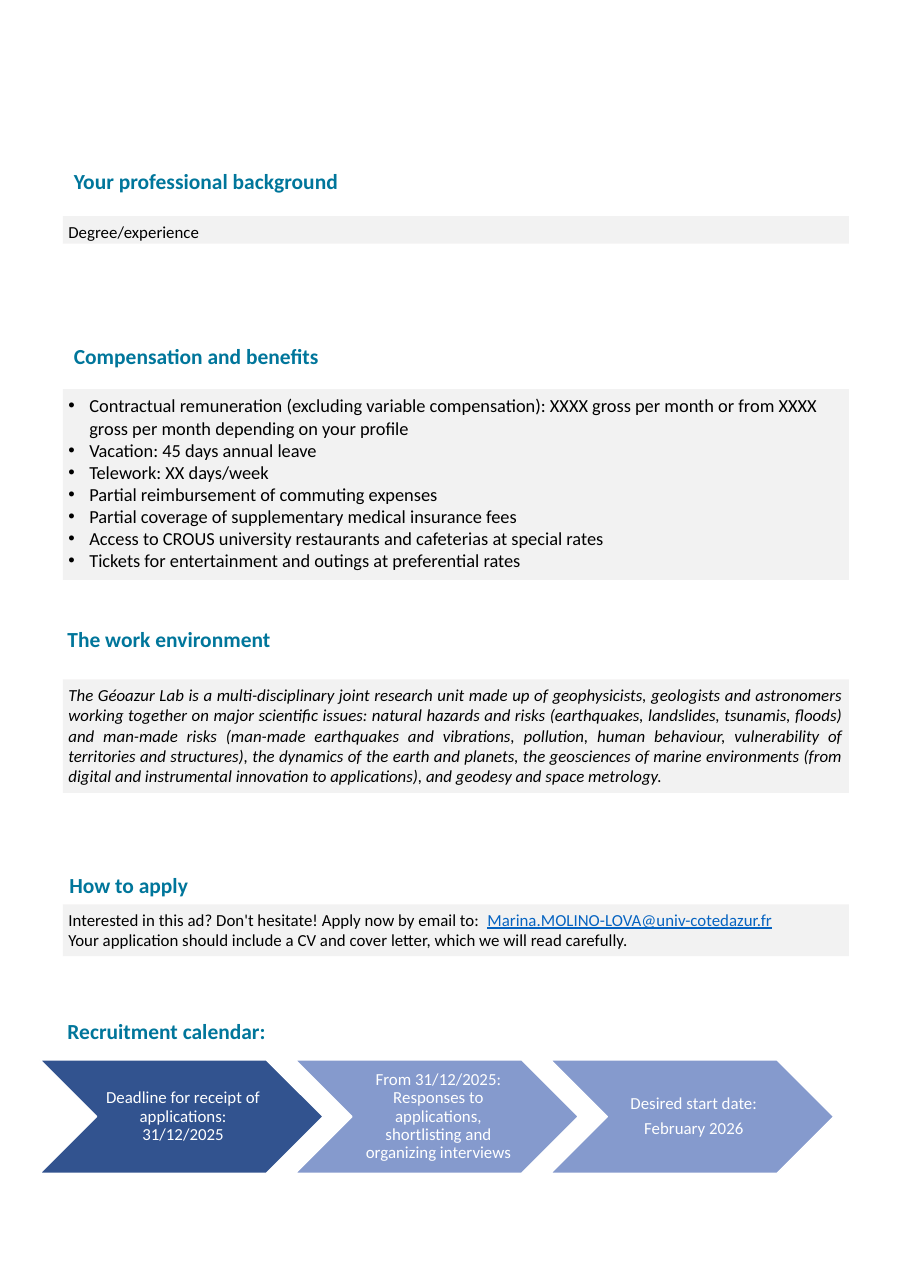
"""Build the job advert page: background, benefits, environment, application and calendar."""
from lxml.etree import SubElement
from pptx import Presentation
from pptx.dml.color import RGBColor
from pptx.enum.shapes import MSO_SHAPE
from pptx.enum.text import MSO_ANCHOR, PP_ALIGN
from pptx.oxml.ns import qn
from pptx.util import Inches, Pt

TEAL = RGBColor(0x00, 0x76, 0x9B)
PANEL_GREY = RGBColor(0xE7, 0xE6, 0xE6)
NAVY = RGBColor(0x32, 0x53, 0x8F)
PERIWINKLE = RGBColor(0x85, 0x9A, 0xCD)
LINK_BLUE = RGBColor(0x05, 0x63, 0xC1)
BLACK = RGBColor(0, 0, 0)
WHITE = RGBColor(0xFF, 0xFF, 0xFF)

advert = Presentation()
advert.slide_width, advert.slide_height = Inches(8.26), Inches(11.68)
page = advert.slides.add_slide(advert.slide_layouts[6])


def area(left, top, width, height):
    """Turn percentages of the page into lengths."""
    across, down = advert.slide_width / 100, advert.slide_height / 100
    return int(left * across), int(top * down), int(width * across), int(height * down)


def write(frame, text, size=11, color=BLACK, bold=False, italic=False, underline=False,
          align=PP_ALIGN.LEFT, bullet=False, spacing=None, before=None, inset=0.05,
          anchor=MSO_ANCHOR.TOP, continued=False):
    """Add a paragraph, or continue the last one, in the given format."""
    frame.word_wrap = True
    frame.vertical_anchor = anchor
    frame.margin_left = frame.margin_right = frame.margin_top = frame.margin_bottom = Inches(inset)
    paragraph = frame.paragraphs[-1]
    if paragraph.runs and not continued:
        paragraph = frame.add_paragraph()
        if before:
            paragraph.space_before = Pt(before)
    paragraph.alignment = align
    if spacing:
        paragraph.line_spacing = spacing
    if bullet:
        properties = paragraph._p.get_or_add_pPr()
        properties.set("marL", str(Inches(0.19)))
        properties.set("indent", str(-Inches(0.19)))
        SubElement(properties, qn("a:buFont")).set("typeface", "Arial")
        SubElement(properties, qn("a:buChar")).set("char", "•")
    run = paragraph.add_run()
    run.text = text
    run.font.name, run.font.size = "Calibri", Pt(size)
    run.font.bold, run.font.italic, run.font.underline = bold, italic, underline
    run.font.color.rgb = color


headings = [
    ("Your professional background", 7.5, 12.6),
    ("Compensation and benefits", 7.5, 26.2),
    ("The work environment", 6.8, 48.2),
    ("How to apply", 7, 67.3),
    ("Recruitment calendar:", 6.8, 78.6),
]
for heading, left, top in headings:
    title = page.shapes.add_textbox(*area(left, top, 85.1, 2.65))
    write(title.text_frame, heading, size=14, color=TEAL, bold=True)

benefits = [
    "Contractual remuneration (excluding variable compensation): XXXX gross per month "
    "or from XXXX gross per month depending on your profile",
    "Vacation: 45 days annual leave",
    "Telework: XX days/week",
    "Partial reimbursement of commuting expenses",
    "Partial coverage of supplementary medical insurance fees",
    "Access to CROUS university restaurants and cafeterias at special rates",
    "Tickets for entertainment and outings at preferential rates",
]
environment = (
    "The Géoazur Lab is a multi-disciplinary joint research unit made up of geophysicists, "
    "geologists and astronomers working together on major scientific issues: natural hazards "
    "and risks (earthquakes, landslides, tsunamis, floods) and man-made risks (man-made "
    "earthquakes and vibrations, pollution, human behaviour, vulnerability of territories and "
    "structures), the dynamics of the earth and planets, the geosciences of marine environments "
    "(from digital and instrumental innovation to applications), and geodesy and space metrology."
)
justified = {"align": PP_ALIGN.JUSTIFY}
panels = [
    (16.78, 2.14, [("Degree/experience", justified)]),
    (30.22, 14.81, [(benefit, {"size": 12, "bullet": True}) for benefit in benefits]),
    (52.74, 8.82, [(environment, {"italic": True, **justified})]),
    (70.21, 4.02, [
        ("Interested in this ad? Don't hesitate! Apply now by email to:  ", justified),
        ("Marina.MOLINO-LOVA@univ-cotedazur.fr",
         {"color": LINK_BLUE, "underline": True, "continued": True, **justified}),
        ("Your application should include a CV and cover letter, which we will read carefully.",
         justified),
    ]),
]
for top, height, passages in panels:
    panel = page.shapes.add_shape(MSO_SHAPE.RECTANGLE, *area(6.9, top, 86.3, height))
    panel.shadow.inherit = False
    panel.line.fill.background()
    panel.fill.solid()
    panel.fill.fore_color.rgb = PANEL_GREY
    tint = panel._element.spPr.find(qn("a:solidFill"))[0]
    SubElement(tint, qn("a:alpha")).set("val", "50000")
    for passage, style in passages:
        write(panel.text_frame, passage, **style)

steps = [
    (NAVY, ["Deadline for receipt of applications: 31/12/2025"]),
    (PERIWINKLE, ["From 31/12/2025: Responses to applications, shortlisting and "
                  "organizing interviews"]),
    (PERIWINKLE, ["Desired start date:", "February 2026"]),
]
for column, (shade, lines) in enumerate(steps):
    left = 4.36 + column * 28.03
    arrow = page.shapes.add_shape(MSO_SHAPE.CHEVRON, *area(left, 82.28, 31.11, 8.82))
    arrow.shadow.inherit = False
    arrow.fill.solid()
    arrow.fill.fore_color.rgb = shade
    arrow.line.color.rgb = WHITE
    arrow.line.width = Pt(1)
    label = page.shapes.add_textbox(*area(left + 6.6, 82.28, 18.28, 8.82))
    for line in lines:
        write(label.text_frame, line, color=WHITE, align=PP_ALIGN.CENTER, spacing=0.9,
              before=4, inset=0.02, anchor=MSO_ANCHOR.MIDDLE)

advert.save("out.pptx")
